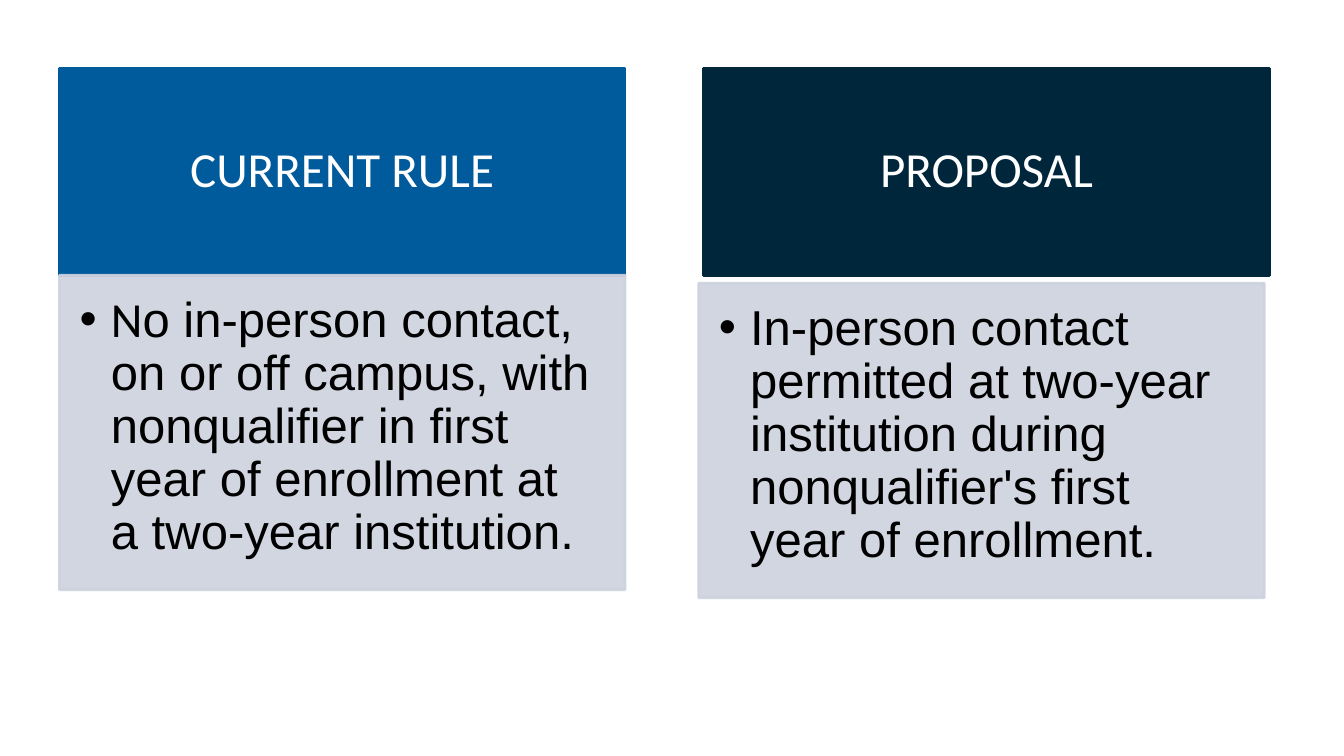
from lxml.etree import SubElement as Sub
from pptx import Presentation
from pptx.dml.color import RGBColor as RGB
from pptx.enum.shapes import MSO_SHAPE as Shape
from pptx.enum.text import MSO_ANCHOR as Anchor, PP_ALIGN as Align
from pptx.oxml.ns import qn
from pptx.util import Pt

PX = 9144  # 100 px to the inch
BLUE = RGB(0x00, 0x5B, 0x9C)
NAVY = RGB(0x00, 0x26, 0x3B)
GREY = RGB(0xCC, 0xD2, 0xDE)
WHITE = RGB(0xFF, 0xFF, 0xFF)
BLACK = RGB(0x00, 0x00, 0x00)

WIDE = 561
HEAD_TOP, HEAD_HIGH, BODY_HIGH = 68, 205, 312
INDENT = 31

deck = Presentation()
deck.slide_width, deck.slide_height = 1333 * PX, 750 * PX
slide = deck.slides.add_slide(deck.slide_layouts[6])


def add_box(left, top, high, color, alpha=100):
    box = slide.shapes.add_shape(
        Shape.RECTANGLE, left * PX, top * PX, WIDE * PX, high * PX)
    box.shadow.inherit = False
    box.fill.solid()
    box.fill.fore_color.rgb = color
    box.line.color.rgb = color
    box.line.width = Pt(2)
    if alpha < 100:
        for tint in box._element.spPr.iter(qn("a:srgbClr")):
            Sub(tint, qn("a:alpha"), val=str(alpha * 1000))
    return box


def add_text(text, box, color, font, pads, anchor, align, bullet=False, first=""):
    frame = box.text_frame
    frame.word_wrap = True
    frame.vertical_anchor = anchor
    (frame.margin_left, frame.margin_top,
     frame.margin_right, frame.margin_bottom) = [pad * PX for pad in pads]
    para = frame.paragraphs[0]
    para.alignment = align
    para.line_spacing = 0.9
    if bullet:
        para.level = 1
        props = para._p.get_or_add_pPr()
        props.set("marL", str(INDENT * PX))
        props.set("indent", str(-INDENT * PX))
        Sub(props, qn("a:buFont"), typeface="Arial")
        Sub(props, qn("a:buChar"), char="•")
    # The opening letters may have a font of their own
    for part, face in ((first, "Calibri"), (text, font)):
        if part:
            run = para.add_run()
            run.text = part
            run.font.name = face
            run.font.size = Pt(35)
            run.font.color.rgb = color


# Columns: head, head colour, head left, body left, body top, first letter, body
columns = [
    ("CURRENT RULE", BLUE, 59, 59, 273, "N",
     "o in-person contact, on or off campus, with nonqualifier in first "
     "year of enrollment at a two-year institution."),
    ("PROPOSAL", NAVY, 698, 693, 281, "",
     "In-person contact permitted at two-year institution during "
     "nonqualifier's first year of enrollment."),
]
for title, color, head_left, body_left, body_top, first, body in columns:
    head = add_box(head_left, HEAD_TOP, HEAD_HIGH, color)
    add_text(title, head, color=WHITE, font="Calibri", pads=(27, 16, 27, 16),
             anchor=Anchor.MIDDLE, align=Align.CENTER)
    panel = add_box(body_left, body_top, BODY_HIGH, GREY, alpha=90)
    add_text(body, panel, color=BLACK, font="Arial", pads=(20, 20, 27, 31),
             anchor=Anchor.TOP, align=Align.LEFT, bullet=True, first=first)

deck.save("out.pptx")
